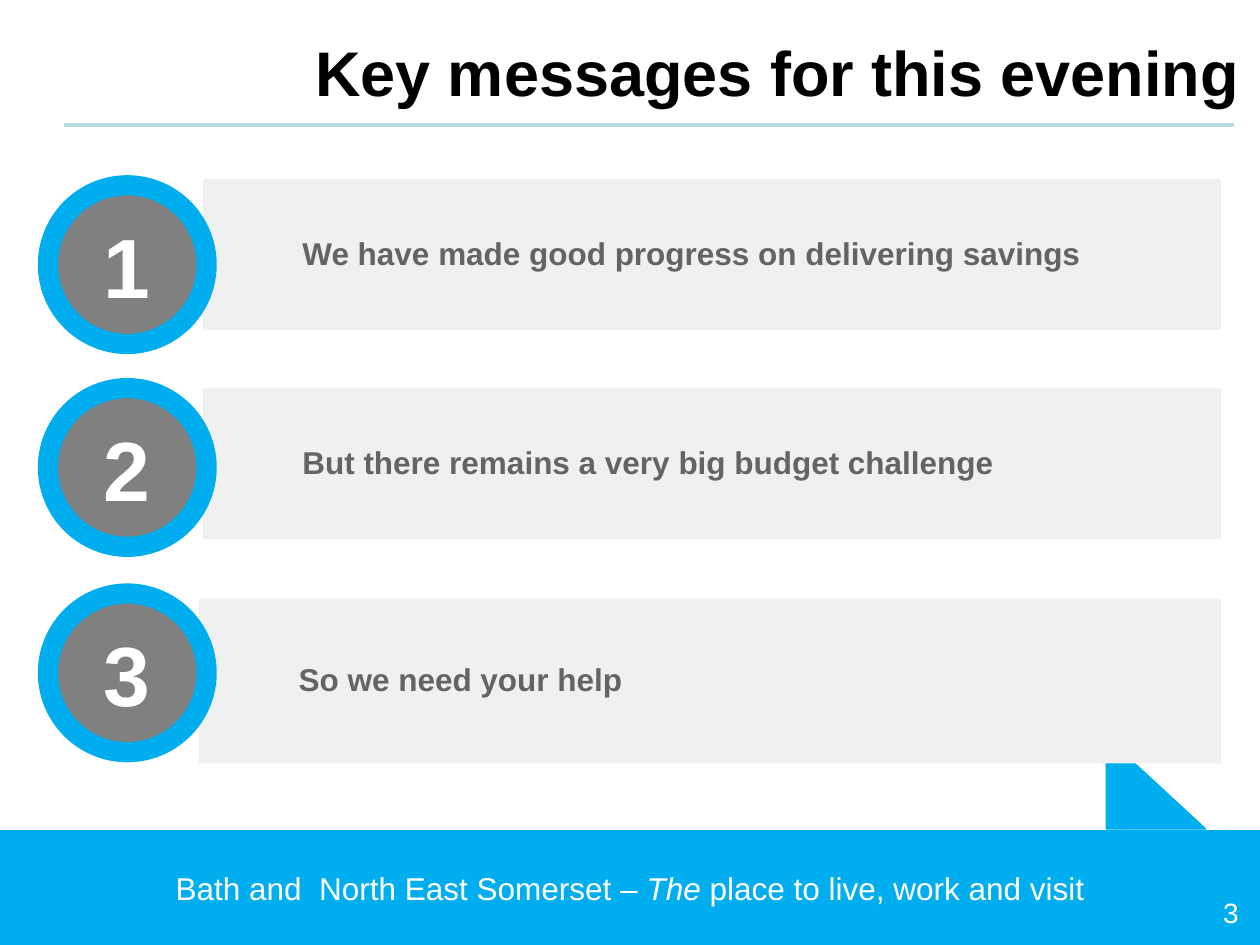
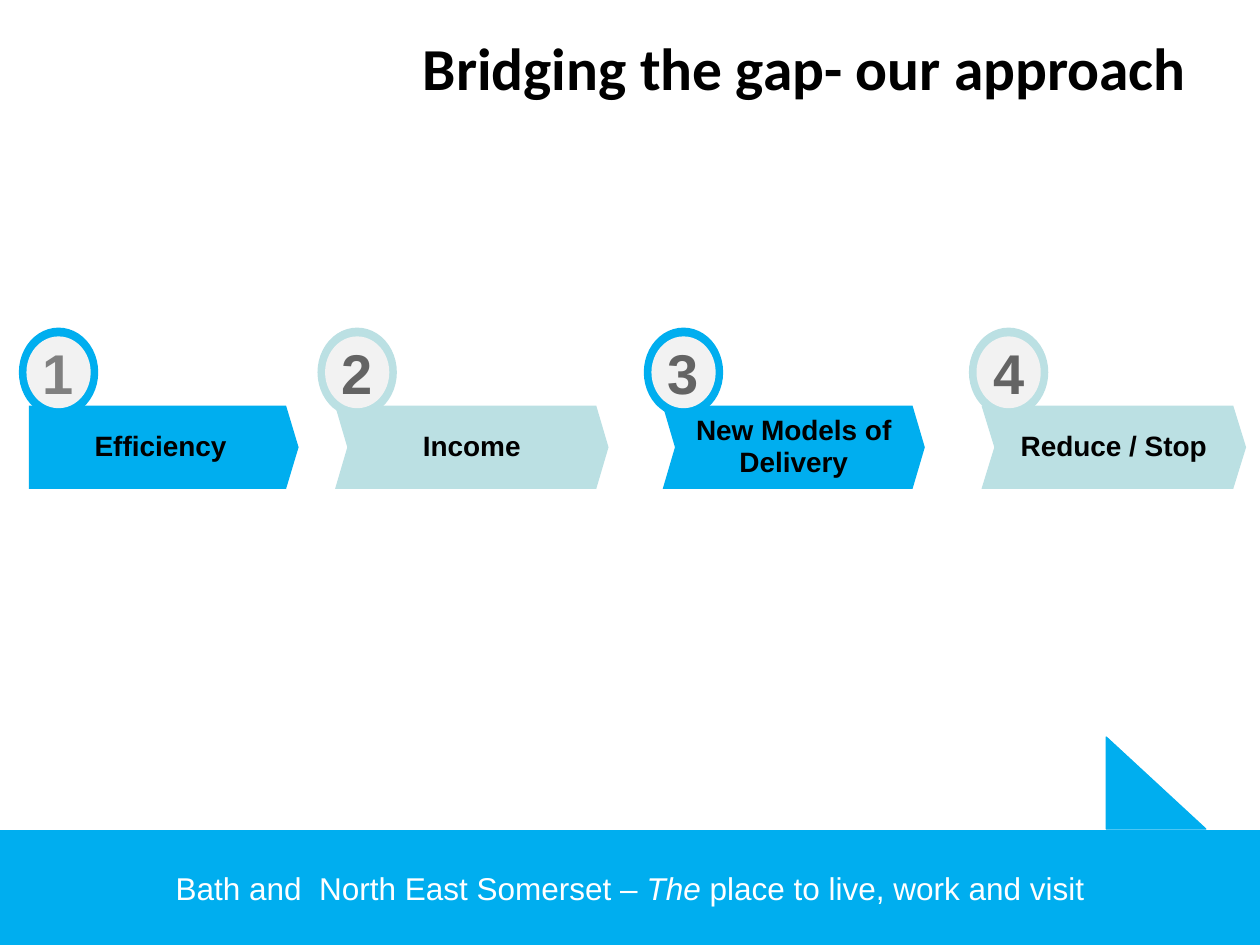
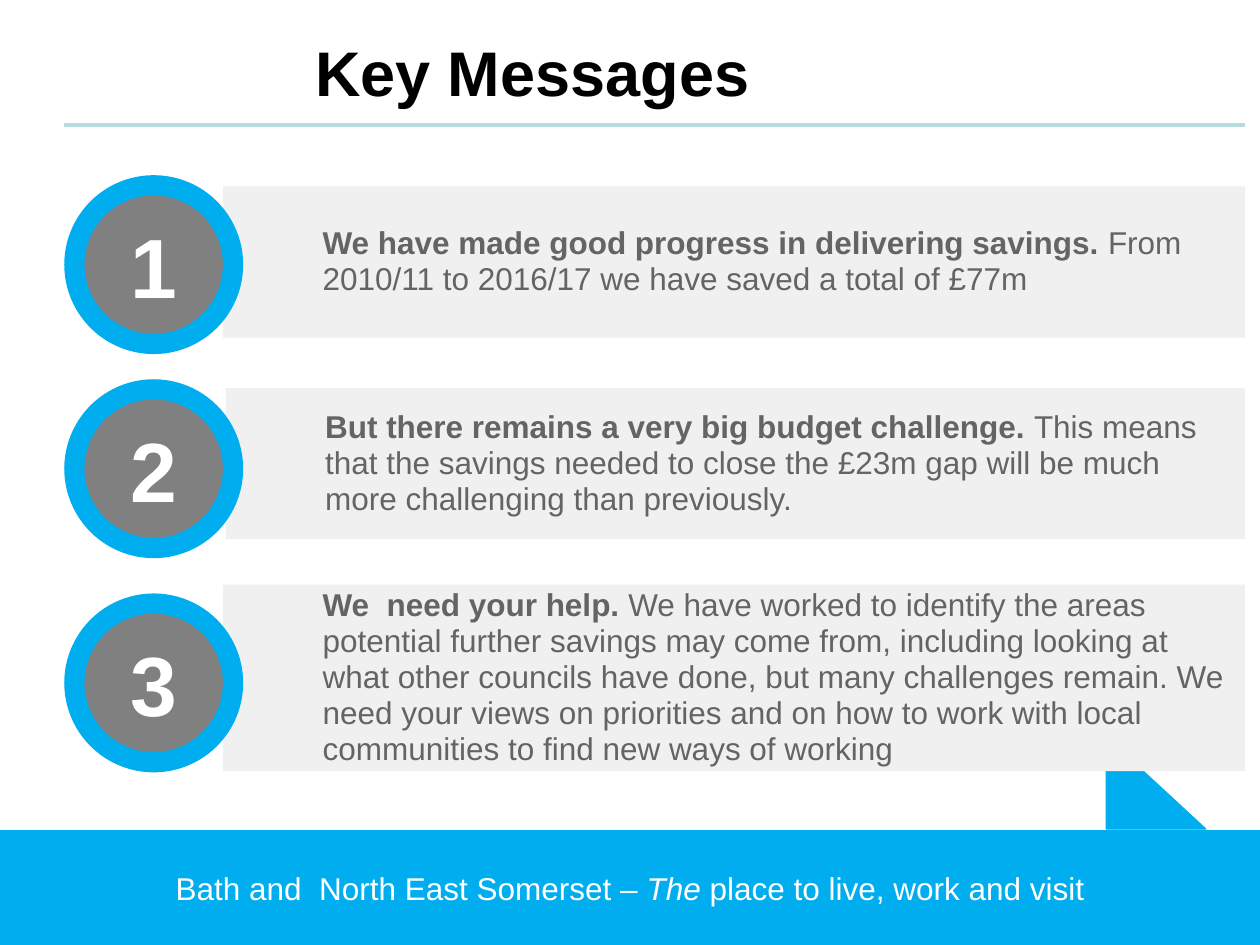
"""Build three slides on the council's budget messages."""
from dataclasses import dataclass

from lxml.etree import SubElement as Sub
from pptx import Presentation
from pptx.dml.color import RGBColor as Rgb
from pptx.enum.shapes import MSO_CONNECTOR as Link, MSO_SHAPE as Kind
from pptx.enum.text import MSO_ANCHOR as Anchor, PP_ALIGN as Align
from pptx.oxml.ns import qn
from pptx.util import Inches, Pt


@dataclass(frozen=True)
class Theme:
    """Hold the colours, fonts and type sizes of the deck."""
    blue: str = "00AEEF"
    teal: str = "BBE0E3"
    rule: str = "B6DCDF"
    card: str = "F0F0F0"
    pale: str = "F2F2F2"
    grey: str = "808080"
    ink: str = "646464"
    black: str = "000000"
    white: str = "FFFFFF"
    font: str = "Arial"
    alt: str = "Calibri"
    head: int = 36
    lead: int = 34
    digit: int = 48
    badge: int = 32
    body: int = 18
    label: int = 16


T = Theme()


def write(frame, runs, size, color, align=Align.LEFT, font=T.font, gap=None):
    """Fill a frame with one paragraph of (text, style) runs."""
    para = frame.paragraphs[0]
    para.alignment = align
    para.line_spacing = gap
    for words, style in runs:
        run = para.add_run()
        run.text = words
        face = run.font
        face.name, face.size = font, Pt(size)
        face.bold, face.italic = style == "bold", style == "italic"
        face.color.rgb = Rgb.from_string(color)


def inset(frame, left, top, right, low):
    """Set the four margins of a frame."""
    frame.margin_left, frame.margin_top = Inches(left), Inches(top)
    frame.margin_right, frame.margin_bottom = Inches(right), Inches(low)


def place(shape, left, top, width, height):
    """Move and size a shape."""
    shape.left, shape.top = Inches(left), Inches(top)
    shape.width, shape.height = Inches(width), Inches(height)


def form(slide, kind, box, fill, edge=False, adj=None):
    """Add a flat preset shape, edged in its own fill if asked."""
    shape = slide.shapes.add_shape(kind, *map(Inches, box))
    shape.shadow.inherit = False
    shape.fill.solid()
    shape.fill.fore_color.rgb = Rgb.from_string(fill)
    if edge:
        shape.line.color.rgb = Rgb.from_string(fill)
        shape.line.width = Pt(0.75)
    else:
        shape.line.fill.background()
    if adj is not None:
        shape.adjustments[0] = adj
    shape.text_frame.vertical_anchor = Anchor.MIDDLE
    return shape


def footer(slide):
    """Draw the blue band with its pointer and slogan."""
    form(slide, Kind.RIGHT_TRIANGLE, (8.78, 5.85, 0.79, 0.73), T.blue, True)
    band = form(slide, Kind.RECTANGLE, (0, 6.59, 10, 0.91), T.blue, True)
    runs = [("Bath and  North East Somerset – ", ""), ("The", "italic"),
            (" place to live, work and visit", "")]
    write(band.text_frame, runs, T.body, T.white, Align.CENTER)


def start(deck):
    """Add a title-only slide with the shared footer."""
    slide = deck.slides.add_slide(deck.slide_layouts[5])
    footer(slide)
    return slide


def title(slide, words):
    """Set the main title style."""
    head = slide.shapes.title
    place(head, 2.4, 0.13, 8.04, 0.87)
    head.text_frame.vertical_anchor = Anchor.MIDDLE
    write(head.text_frame, [(words, "bold")], T.head, T.black)


def rule(slide, end):
    """Draw the line under the title."""
    ends = map(Inches, (0.51, 0.99, end, 0.99))
    line = slide.shapes.add_connector(Link.STRAIGHT, *ends)
    line.line.color.rgb = Rgb.from_string(T.rule)
    line.line.width = Pt(2.25)
    Sub(line._element.spPr, qn("a:effectLst"))


def card(slide, left, top, right, height, runs):
    """Draw a grey message card."""
    box = (left, top, right - left, height)
    frame = form(slide, Kind.RECTANGLE, box, T.card).text_frame
    inset(frame, 0.79, 0.08, 0.12, 0.08)
    write(frame, runs, T.body, T.ink, gap=0.95)


def medal(slide, left, top, num):
    """Draw a numbered disc inside a blue ring."""
    box = (left + 0.14, top + 0.14, 1.14, 1.14)
    disc = form(slide, Kind.OVAL, box, T.grey)
    write(disc.text_frame, [(str(num), "bold")], T.digit, T.white, Align.CENTER)
    form(slide, Kind.DONUT, (left, top, 1.42, 1.42), T.blue, adj=0.113)


def points(deck, head, left, right, rows):
    """Build a slide of numbered message cards."""
    slide = start(deck)
    title(slide, head)
    rule(slide, right + 0.1 if right < 9.7 else right)
    for num, (ring, start_x, top, height, *runs) in enumerate(rows, 1):
        card(slide, start_x, top, right, height, runs)
        medal(slide, left, ring, num)
    return slide


def step(slide, num, words, kind, left, width, badge, adj):
    """Draw one arrow of the approach with its numbered badge."""
    tone = T.blue if num % 2 else T.teal
    arrow = form(slide, kind, (left, 3.22, width, 0.66), tone, adj=adj)
    inset(arrow.text_frame, 0.1, 0.05, 0.1, 0.05)
    write(arrow.text_frame, [(words, "bold")], T.label, T.black,
          Align.CENTER, gap=0.95)
    form(slide, Kind.OVAL, (badge, 2.6, 0.63, 0.71), tone)
    disc = form(slide, Kind.OVAL, (badge + 0.06, 2.67, 0.51, 0.57), T.pale)
    inset(disc.text_frame, 0, 0, 0, 0)
    write(disc.text_frame, [(str(num), "bold")], T.badge,
          T.grey if num == 1 else T.ink, Align.CENTER)


def steps(deck):
    """Build the slide of the four-step approach."""
    slide = start(deck)
    head = slide.shapes.title
    place(head, 3.31, 0.22, 6.15, 0.76)
    frame = head.text_frame
    frame.vertical_anchor = Anchor.TOP
    inset(frame, 0.03, 0.03, 0.03, 0.03)
    write(frame, [("Bridging the gap- our approach", "bold")], T.lead,
          T.black, Align.CENTER, T.alt)
    rows = [
        ("Efficiency", Kind.PENTAGON, 0.23, 2.14, 0.15, 0.15),
        ("Income", Kind.CHEVRON, 2.66, 2.17, 2.52, 0.147),
        ("New Models of Delivery", Kind.CHEVRON, 5.26, 2.08, 5.11, 0.147),
        ("Reduce / Stop", Kind.CHEVRON, 7.79, 2.1, 7.69, 0.154),
    ]
    for num, row in enumerate(rows, 1):
        step(slide, num, *row)


def number(slide, num):
    """Write the page number on the footer band."""
    box = slide.shapes.add_textbox(*map(Inches, (7.6, 7.06, 2.33, 0.4)))
    box.text_frame.word_wrap = True
    write(box.text_frame, [(str(num), "")], T.label, T.white, Align.RIGHT)


def main():
    """Build and save the deck."""
    deck = Presentation()
    deck.slide_width, deck.slide_height = Inches(10), Inches(7.5)
    first = points(deck, "Key messages for this evening", 0.3, 9.69, [
        (1.39, 1.61, 1.42, 1.2,
         ("We have made good progress on delivering savings", "bold")),
        (3, 1.61, 3.08, 1.2,
         ("But there remains a very big budget challenge", "bold")),
        (4.63, 1.58, 4.75, 1.31, ("So we need your help", "bold")),
    ])
    number(first, 3)
    steps(deck)
    points(deck, "Key Messages", 0.51, 9.88, [
        (1.39, 1.77, 1.48, 1.2,
         ("We have made good progress in delivering savings. ", "bold"),
         ("From 2010/11 to 2016/17 we have saved a total of £77m", "")),
        (3.01, 1.79, 3.08, 1.2,
         ("But there remains a very big budget challenge. ", "bold"),
         ("This means that the savings needed to close the £23m gap will "
          "be much more challenging than previously.", "")),
        (4.71, 1.77, 4.64, 1.48,
         ("We  need your help. ", "bold"),
         ("We have worked to identify the areas potential further savings "
          "may come from, including looking at what other councils have "
          "done, but many challenges remain. We need your views on "
          "priorities and on how to work with local communities to find "
          "new ways of working", "")),
    ])
    deck.save("out.pptx")


if __name__ == "__main__":
    main()
